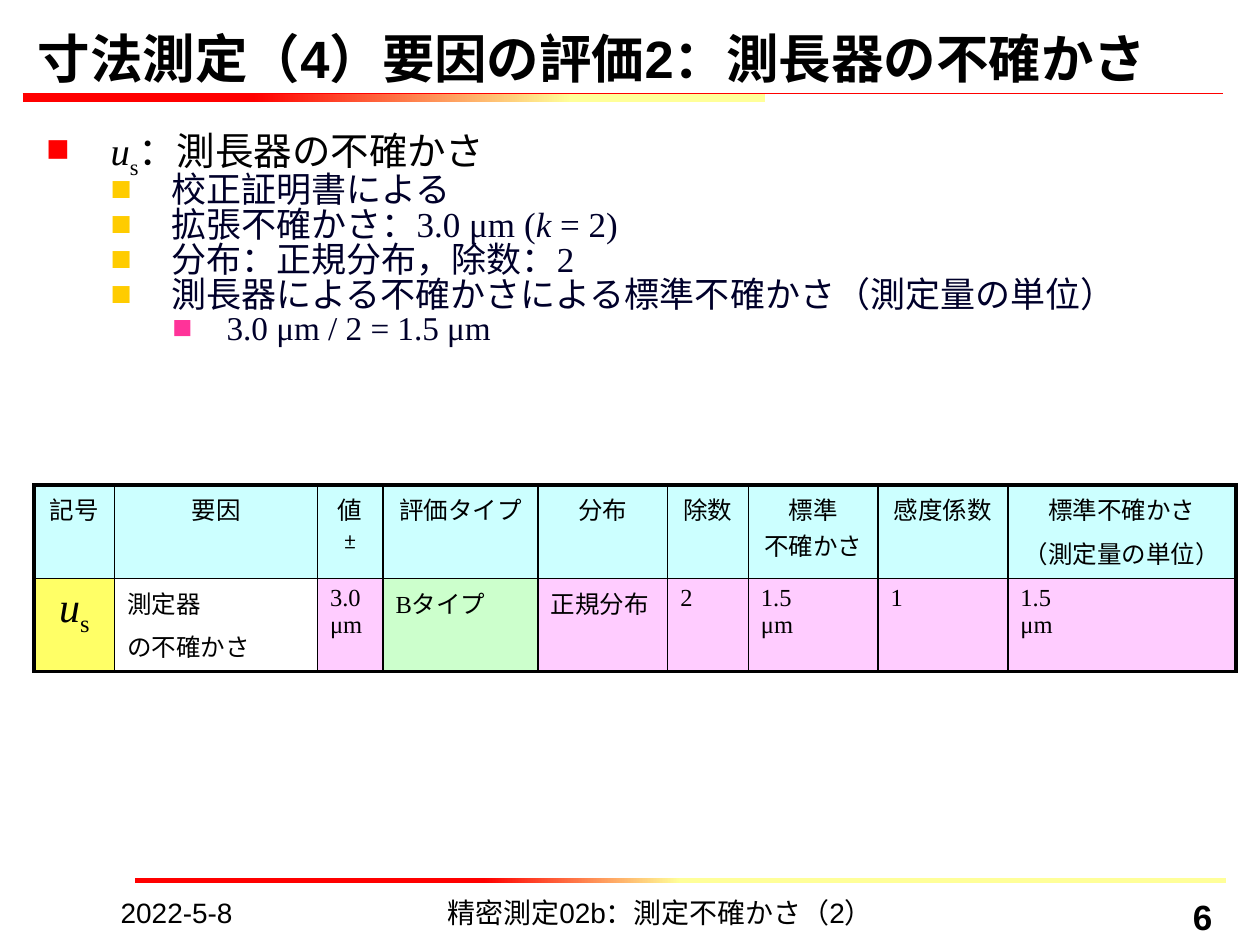
from lxml import etree
from pptx import Presentation
from pptx.dml.color import RGBColor
from pptx.enum import shapes, text
from pptx.oxml import ns
from pptx.util import Inches, Pt

SERIF, SANS = "Times New Roman", "Arial"
TITLE = "寸法測定（4）要因の評価2：測長器の不確かさ"
SYMBOL = [("u", "italic"), ("s", "sub")]
BODY = [
    (0, SYMBOL + [("：測長器の不確かさ", "")]),
    (1, [("校正証明書による", "")]),
    (1, [("拡張不確かさ：3.0 μm (", ""), ("k", "italic"), (" = 2)", "")]),
    (1, [("分布：正規分布，除数：2", "")]),
    (1, [("測長器による不確かさによる標準不確かさ（測定量の単位）", "")]),
    (2, [("3.0 μm / 2 = 1.5 μm", "")]),
]
LEVELS = [
    {"indent": 0.51, "hang": 0.51, "bullet": "FF0000", "size": 22, "color": "000000"},
    {"indent": 0.99, "hang": 0.48, "bullet": "FFCC00", "size": 20, "color": "00002A"},
    {"indent": 1.43, "hang": 0.43, "bullet": "FF3399", "size": 19, "color": "00002A"},
]
COLUMNS = [0.64, 1.61, 0.52, 1.23, 1.03, 0.64, 1.03, 1.03, 1.81]
ROW_HEIGHT = 0.74
HEADER = ["記号", "要因", "値\v±", "評価タイプ", "分布", "除数",
          "標準\v不確かさ", "感度係数", "標準不確かさ\n（測定量の単位）"]
VALUES = ["", "測定器\nの不確かさ", "3.0\vμm", "Bタイプ", "正規分布", "2",
          "1.5\vμm", "1", "1.5\vμm"]
HEADER_FILL = "CCFFFF"
VALUE_FILLS = ["FFFF66", "FFFFFF", "FFCCFF", "CCFFCC"] + ["FFCCFF"] * 5
FOOTERS = [
    ("2022-5-8", 0.86, 2.17, "LEFT", 16, False),
    ("精密測定02b：測定不確かさ（2）", 2.64, 5.2, "CENTER", 16, False),
    ("6", 8.07, 1.65, "RIGHT", 20, True),
]
BARS = [
    ((1.07, 6.97, 8.66, 0.04), 0.5, 0.68),
    ((0.18, 0.74, 5.89, 0.07), 0.26, 0.69),
]


def rgb(value):
    return RGBColor.from_string(value)


def style(run, size, color="000000", name=SERIF, bold=False, kind=""):
    run.font.size = Pt(size)
    run.font.name = name
    run.font.bold = bold
    run.font.italic = kind == "italic"
    run.font.color.rgb = rgb(color)
    if kind == "sub":
        run.font._element.set("baseline", "-25000")


def add_runs(paragraph, pieces, size, color="000000"):
    for wording, kind in pieces:
        run = paragraph.add_run()
        run.text = wording
        style(run, size, color, kind=kind)


def add_bullet(paragraph, level):
    props = paragraph._p.get_or_add_pPr()
    props.set("marL", str(Inches(level["indent"])))
    props.set("indent", str(-Inches(level["hang"])))
    color = etree.SubElement(props, ns.qn("a:buClr"))
    etree.SubElement(color, ns.qn("a:srgbClr"), val=level["bullet"])
    etree.SubElement(props, ns.qn("a:buFont"), typeface=SANS)
    etree.SubElement(props, ns.qn("a:buChar"), char="■")


def add_border(cell, side, width):
    line = etree.SubElement(cell._tc.get_or_add_tcPr(), ns.qn("a:ln" + side), w=str(Pt(width)))
    fill = etree.SubElement(line, ns.qn("a:solidFill"))
    etree.SubElement(fill, ns.qn("a:srgbClr"), val="000000")


def add_box(slide, left, top, width, height):
    frame = slide.shapes.add_textbox(*map(Inches, (left, top, width, height))).text_frame
    frame.word_wrap = True
    return frame


def add_rules(slide):
    for place, yellow_at, red_at in BARS:
        bar = slide.shapes.add_shape(shapes.MSO_SHAPE.RECTANGLE, *map(Inches, place))
        bar.shadow.inherit = False
        bar.line.fill.background()
        bar.fill.gradient()
        bar.fill.gradient_angle = 180
        stops = zip(bar.fill.gradient_stops, ((yellow_at, "FFFF99"), (red_at, "FF0000")))
        for stop, (position, color) in stops:
            stop.position = position
            stop.color.rgb = rgb(color)
    underline = slide.shapes.add_connector(
        shapes.MSO_CONNECTOR.STRAIGHT, *map(Inches, (0.18, 0.74, 9.71, 0.74)))
    underline.line.color.rgb = rgb("FF0000")
    underline.line.width = Pt(0.75)
    etree.SubElement(underline._element.spPr, ns.qn("a:effectLst"))


def add_title(slide):
    title = slide.shapes.title
    title.left, title.top, title.width, title.height = map(Inches, (0.2, 0.21, 9.53, 0.5))
    frame = title.text_frame
    frame.text = TITLE
    frame.word_wrap = True
    frame.auto_size = text.MSO_AUTO_SIZE.NONE
    frame.vertical_anchor = text.MSO_ANCHOR.BOTTOM
    frame.margin_top = frame.margin_bottom = 0
    frame.paragraphs[0].alignment = text.PP_ALIGN.LEFT
    style(frame.paragraphs[0].runs[0], 30, name=SANS, bold=True)


def add_body(slide):
    frame = add_box(slide, 0.27, 0.99, 9.45, 5.91)
    for index, (depth, pieces) in enumerate(BODY):
        paragraph = frame.add_paragraph() if index else frame.paragraphs[0]
        level = LEVELS[depth]
        paragraph.level = depth
        add_bullet(paragraph, level)
        paragraph.line_spacing = 0.83
        add_runs(paragraph, pieces, level["size"], level["color"])


def fill_cell(cell, wording, centred):
    cell.text_frame.text = wording
    for index, paragraph in enumerate(cell.text_frame.paragraphs):
        paragraph.alignment = text.PP_ALIGN.CENTER if centred else text.PP_ALIGN.LEFT
        if index:
            paragraph.space_before = Pt(4.2)
        for run in paragraph.runs:
            style(run, 14, name="Cambria" if run.text == "±" else SERIF)
        for line_break in paragraph._p.findall(ns.qn("a:br")):
            etree.SubElement(line_break, ns.qn("a:rPr"), sz="1400")


def add_budget(slide):
    rows = [HEADER, VALUES]
    fills = [[HEADER_FILL] * len(COLUMNS), VALUE_FILLS]
    budget = slide.shapes.add_table(
        len(rows), len(COLUMNS), Inches(0.27), Inches(3.85),
        Inches(sum(COLUMNS)), Inches(ROW_HEIGHT * len(rows))).table
    for column, width in zip(budget.columns, COLUMNS):
        column.width = Inches(width)
    for r, row in enumerate(rows):
        budget.rows[r].height = Inches(ROW_HEIGHT)
        for c, wording in enumerate(row):
            cell = budget.cell(r, c)
            outer = {"L": c == 0, "R": c == len(row) - 1, "T": r == 0, "B": r == len(rows) - 1}
            for side, is_outer in outer.items():
                add_border(cell, side, 2.25 if is_outer else 1)
            cell.fill.solid()
            cell.fill.fore_color.rgb = rgb(fills[r][c])
            fill_cell(cell, wording, r == 0 or c == 0)
    add_runs(budget.cell(1, 0).text_frame.paragraphs[0], SYMBOL, 24)


def add_footers(slide):
    for wording, left, width, alignment, size, bold in FOOTERS:
        frame = add_box(slide, left, 7.06, width, 0.29)
        frame.text = wording
        frame.paragraphs[0].alignment = text.PP_ALIGN[alignment]
        style(frame.paragraphs[0].runs[0], size, name=SANS, bold=bold)


def main():
    deck = Presentation()
    deck.slide_width, deck.slide_height = Inches(10), Inches(7.5)
    slide = deck.slides.add_slide(deck.slide_layouts[5])
    for add_part in (add_rules, add_title, add_body, add_budget, add_footers):
        add_part(slide)
    deck.save("out.pptx")


if __name__ == "__main__":
    main()
